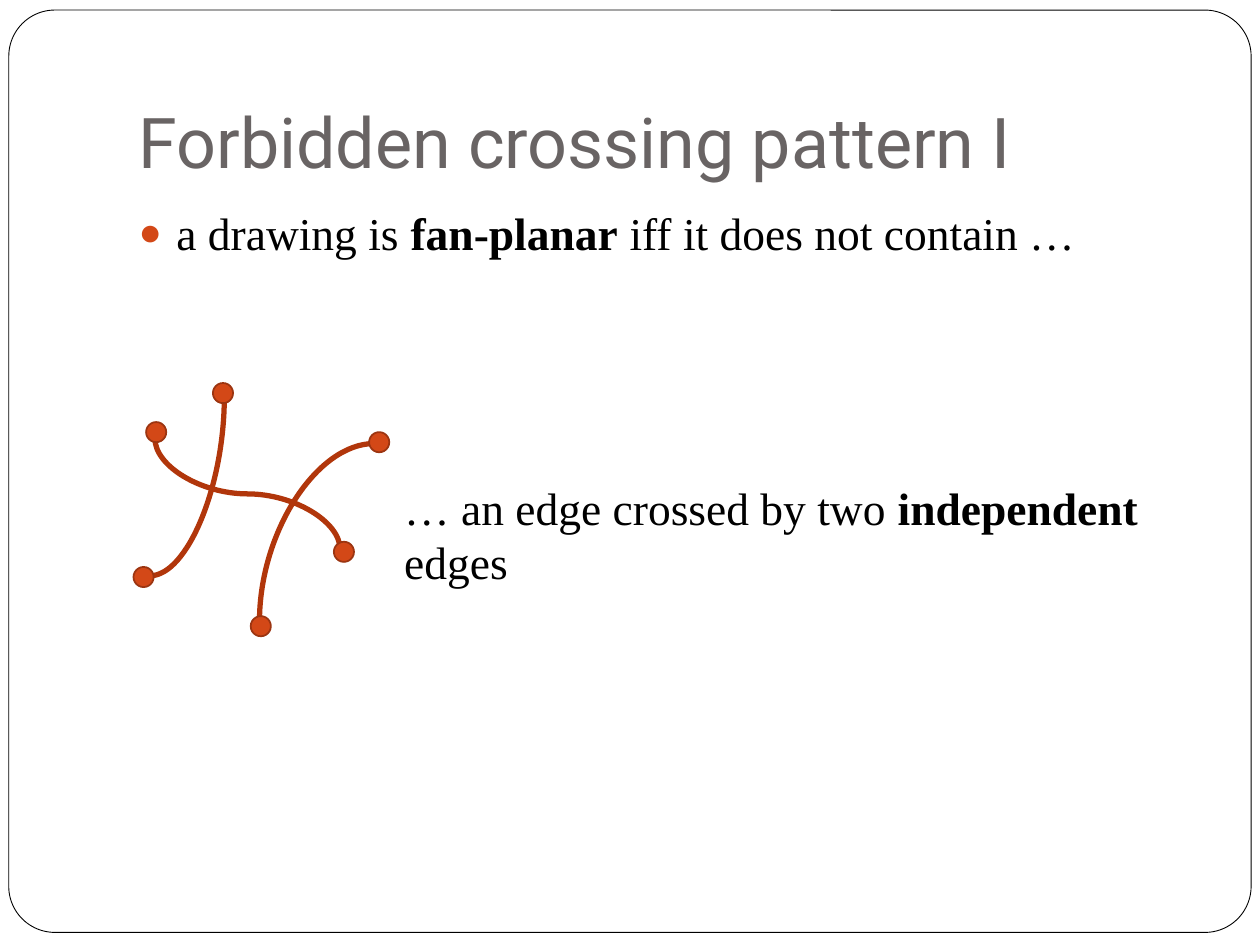
"""Build the slide on the first forbidden crossing pattern of fan-planar drawings."""
from lxml import etree
from pptx import Presentation
from pptx.dml.color import RGBColor
from pptx.enum.shapes import MSO_CONNECTOR, MSO_SHAPE
from pptx.enum.text import MSO_ANCHOR, MSO_AUTO_SIZE, PP_ALIGN
from pptx.oxml.ns import qn
from pptx.util import Inches, Pt

CURVE = MSO_CONNECTOR.CURVE
OVAL, ROUND = MSO_SHAPE.OVAL, MSO_SHAPE.ROUNDED_RECTANGLE
TOP, BOTTOM = MSO_ANCHOR.TOP, MSO_ANCHOR.BOTTOM
LEFT, FIXED = PP_ALIGN.LEFT, MSO_AUTO_SIZE.NONE

TITLE = [("Forbidden crossing pattern I", False)]
CLAIM = [("a drawing is ", False), ("fan-planar", True),
         (" iff it does not contain …", False)]
CASE = [("… an edge crossed by two ", False), ("independent", True),
        (" edges", False)]

WIDE, HIGH = 10, 7.5
SERIF, SANS = "Times New Roman", "Roboto"
NODE = 0.16
NODES = [(1.24, 3.43), (1.14, 4.58), (3.01, 3.51),
         (2.07, 4.97), (2.73, 4.38), (1.77, 3.12)]
BENDS = [((2.97, 3.52), (2.06, 4.93)), ((1.19, 4.57), (1.78, 3.15))]
WAVE = ((1.23, 3.48), (2.7, 4.36))


def tint(code):
    return RGBColor.from_string(code)


def place(shape, *box):
    shape.left, shape.top, shape.width, shape.height = map(Inches, box)


def write(shape, runs, size=26, face=SERIF, color="000000", anchor=TOP, foot=0.05):
    frame = shape.text_frame
    frame.word_wrap, frame.auto_size = True, FIXED
    frame.vertical_anchor = anchor
    frame.margin_left = frame.margin_right = Inches(0.1)
    frame.margin_top, frame.margin_bottom = Inches(0.05), Inches(foot)
    para = frame.paragraphs[0]
    para.alignment, para.space_before = LEFT, Pt(0)
    for text, bold in runs:
        run = para.add_run()
        run.text = text
        font = run.font
        font.name, font.size, font.bold = face, Pt(size), bold
        font.color.rgb = tint(color)
    return para


def bullet(para, mark, color, share, indent):
    props = para._p.get_or_add_pPr()
    props.set("marL", str(Inches(indent)))
    props.set("indent", str(-Inches(indent)))
    paint = etree.SubElement(props, qn("a:buClr"))
    etree.SubElement(paint, qn("a:srgbClr"), val=color)
    etree.SubElement(props, qn("a:buSzPct"), val=str(share * 1000))
    etree.SubElement(props, qn("a:buFont"), typeface=SERIF)
    etree.SubElement(props, qn("a:buChar"), char=mark)


def draw(slide, kind, box, fill, line, width):
    shape = slide.shapes.add_shape(kind, *map(Inches, box))
    shape.shadow.inherit = False
    shape.fill.solid()
    shape.fill.fore_color.rgb = tint(fill)
    shape.line.color.rgb = tint(line)
    shape.line.width = Pt(width)
    return shape


def edge(slide, start, end):
    link = slide.shapes.add_connector(CURVE, *map(Inches, (*start, *end)))
    link.line.color.rgb = tint("B1360B")
    link.line.width = Pt(3)
    props = link._element.spPr
    etree.SubElement(props, qn("a:effectLst"))
    return props


def bend(slide, start, end):
    edge(slide, start, end).find(qn("a:prstGeom")).set("prst", "curvedConnector2")


def wave(slide, start, end):
    (left, top), (right, low) = start, end
    midx, midy = (left + right) / 2, (top + low) / 2
    dx, dy = (low - top) / 2, (right - left) / 2
    props = edge(slide, (midx + dx, midy - dy), (midx - dx, midy + dy))
    props.find(qn("a:xfrm")).set("rot", str(270 * 60000))


def main():
    deck = Presentation()
    deck.slide_width, deck.slide_height = Inches(WIDE), Inches(HIGH)
    slide = deck.slides.add_slide(deck.slide_layouts[1])
    title, body = slide.placeholders

    card = draw(slide, ROUND, (0.07, 0.08, 9.86, 7.32), "FFFFFF", "000000", 0.5)
    card.adjustments[0] = 0.05
    title._element.addprevious(card._element)

    place(title, 1, 0.3, 8.5, 1.25)
    write(title, TITLE, size=40, face=SANS, color="696464", anchor=BOTTOM, foot=0.1)
    place(body, 1, 1.58, 8.5, 5)
    bullet(write(body, CLAIM), "●", "D34817", 85, 0.3)

    for ends in BENDS:
        bend(slide, *ends)
    wave(slide, *WAVE)
    for x, y in NODES:
        box = (x - NODE / 2, y - NODE / 2, NODE, NODE)
        draw(slide, OVAL, box, "D34817", "9C3511", 1)

    note = slide.shapes.add_textbox(*map(Inches, (3.11, 3.76, 6.56, 0.54)))
    write(note, CASE)
    deck.save("out.pptx")


if __name__ == "__main__":
    main()
